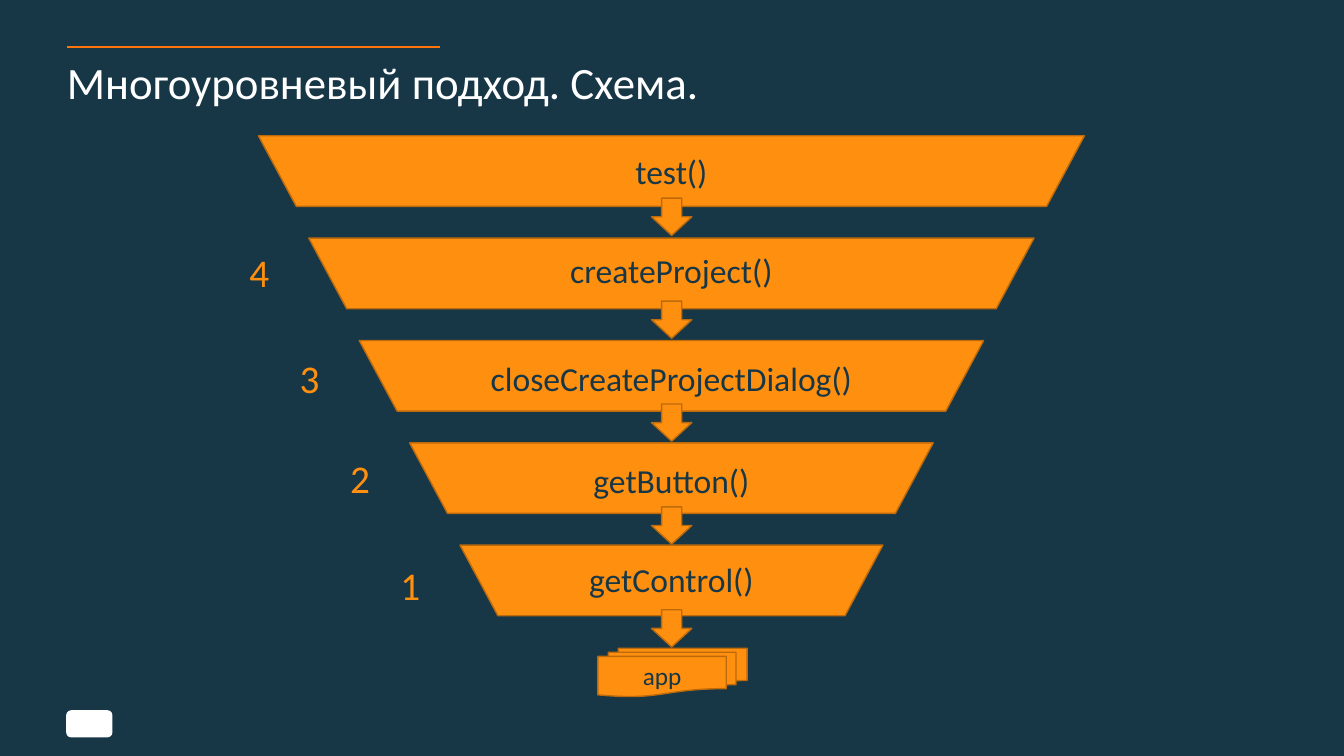
from lxml import etree
from pptx import Presentation
from pptx.dml.color import RGBColor
from pptx.enum.shapes import MSO_CONNECTOR, MSO_SHAPE
from pptx.enum.text import MSO_ANCHOR, MSO_AUTO_SIZE, PP_ALIGN
from pptx.oxml.ns import qn
from pptx.util import Pt

TRAPEZOID = MSO_SHAPE.TRAPEZOID
DOWN_ARROW = MSO_SHAPE.DOWN_ARROW
DOCUMENTS = MSO_SHAPE.FLOWCHART_MULTIDOCUMENT
BADGE = MSO_SHAPE.ROUNDED_RECTANGLE
STRAIGHT = MSO_CONNECTOR.STRAIGHT
TOP, MIDDLE = MSO_ANCHOR.TOP, MSO_ANCHOR.MIDDLE
LEFT, CENTER = PP_ALIGN.LEFT, PP_ALIGN.CENTER

NAVY = RGBColor(0x17, 0x37, 0x47)
ORANGE = RGBColor(0xFF, 0x8F, 0x0F)
DARK_ORANGE = RGBColor(0xBD, 0x6A, 0x0B)
ACCENT = RGBColor(0xFF, 0x73, 0x0B)
WHITE = RGBColor(0xFF, 0xFF, 0xFF)
FONT = "Calibri"

TITLE = "Многоуровневый подход. Схема."
# call, its top; level number, its top (points)
TIERS = [
    ("test()", 104.4, None, None),
    ("createProject()", 175, "4", 172.8),
    ("closeCreateProjectDialog()", 252, "3", 248.4),
    ("getButton()", 324.7, "2", 320.4),
    ("getControl()", 396, "1", 396.7),
]
TARGET = "app"

CENTER_X = 480.2
TIER_TOP, TIER_STEP, TIER_HEIGHT = 97, 73.1, 50.4
TIER_WIDTH, TIER_INSET = 590, 36
ARROW_TOP, ARROW_STEP = 141.6, 73.5
ARROW_WIDTH, ARROW_HEIGHT = 28.8, 26.6
CALL_WIDTH, CALL_HEIGHT = 282, 36
LEVEL_WIDTH, LEVEL_HEIGHT, LEVEL_OFFSET = 52, 42.5, 62


def write(frame, text, size, color, align=CENTER, anchor=TOP):
    frame.word_wrap = True
    frame.auto_size = MSO_AUTO_SIZE.NONE
    frame.vertical_anchor = anchor
    paragraph = frame.paragraphs[0]
    paragraph.alignment = align
    run = paragraph.add_run()
    run.text = text
    run.font.name = FONT
    run.font.size = Pt(size)
    run.font.color.rgb = color
    return paragraph


def add_block(slide, preset, left, top, width, height, fill=ORANGE, outline=DARK_ORANGE):
    block = slide.shapes.add_shape(preset, Pt(left), Pt(top), Pt(width), Pt(height))
    block.shadow.inherit = False
    block.fill.solid()
    block.fill.fore_color.rgb = fill
    block.line.color.rgb = outline
    block.line.width = Pt(1)
    return block


def add_label(slide, left, top, width, height, text, size, color, anchor=TOP):
    label = slide.shapes.add_textbox(Pt(left), Pt(top), Pt(width), Pt(height))
    write(label.text_frame, text, size, color, anchor=anchor)


def add_header(slide):
    rule = slide.shapes.add_connector(STRAIGHT, Pt(47.8), Pt(33.6), Pt(314.6), Pt(33.6))
    rule.line.color.rgb = ACCENT
    rule.line.width = Pt(1.5)
    etree.SubElement(rule._element.spPr, qn("a:effectLst"))

    title = slide.shapes.title
    title.left, title.top, title.width, title.height = Pt(47.8), Pt(43.2), Pt(864), Pt(46.8)
    frame = title.text_frame
    frame.margin_left = frame.margin_top = 0
    write(frame, TITLE, 32, WHITE, align=LEFT).line_spacing = 0.9


def add_funnel(slide):
    for i in range(len(TIERS)):
        width = TIER_WIDTH - 2 * TIER_INSET * i
        tier = add_block(slide, TRAPEZOID, CENTER_X - width / 2 - 0.6,
                         TIER_TOP + TIER_STEP * i, width, TIER_HEIGHT)
        tier.rotation = 180
        tier.adjustments[0] = 0.536

    documents = add_block(slide, DOCUMENTS, 427, 463, 106.6, 34.6)
    write(documents.text_frame, TARGET, 18, NAVY, anchor=MIDDLE)

    for i, (call, call_top, level, level_top) in enumerate(TIERS):
        add_label(slide, CENTER_X - CALL_WIDTH / 2 - 0.6, call_top,
                  CALL_WIDTH, CALL_HEIGHT, call, 24, NAVY)
        add_block(slide, DOWN_ARROW, CENTER_X - ARROW_WIDTH / 2 - 0.4,
                  ARROW_TOP + ARROW_STEP * i, ARROW_WIDTH, ARROW_HEIGHT)
        if level:
            tier_left = CENTER_X - TIER_WIDTH / 2 + TIER_INSET * i
            add_label(slide, tier_left - LEVEL_OFFSET, level_top,
                      LEVEL_WIDTH, LEVEL_HEIGHT, level, 28, ORANGE, MIDDLE)


def main():
    deck = Presentation()
    deck.slide_width, deck.slide_height = Pt(960), Pt(540)
    slide = deck.slides.add_slide(deck.slide_layouts[5])
    slide.background.fill.solid()
    slide.background.fill.fore_color.rgb = NAVY
    add_header(slide)
    add_funnel(slide)
    add_block(slide, BADGE, 47.8, 507.8, 32, 18.4, WHITE, WHITE)
    deck.save("out.pptx")


if __name__ == "__main__":
    main()
